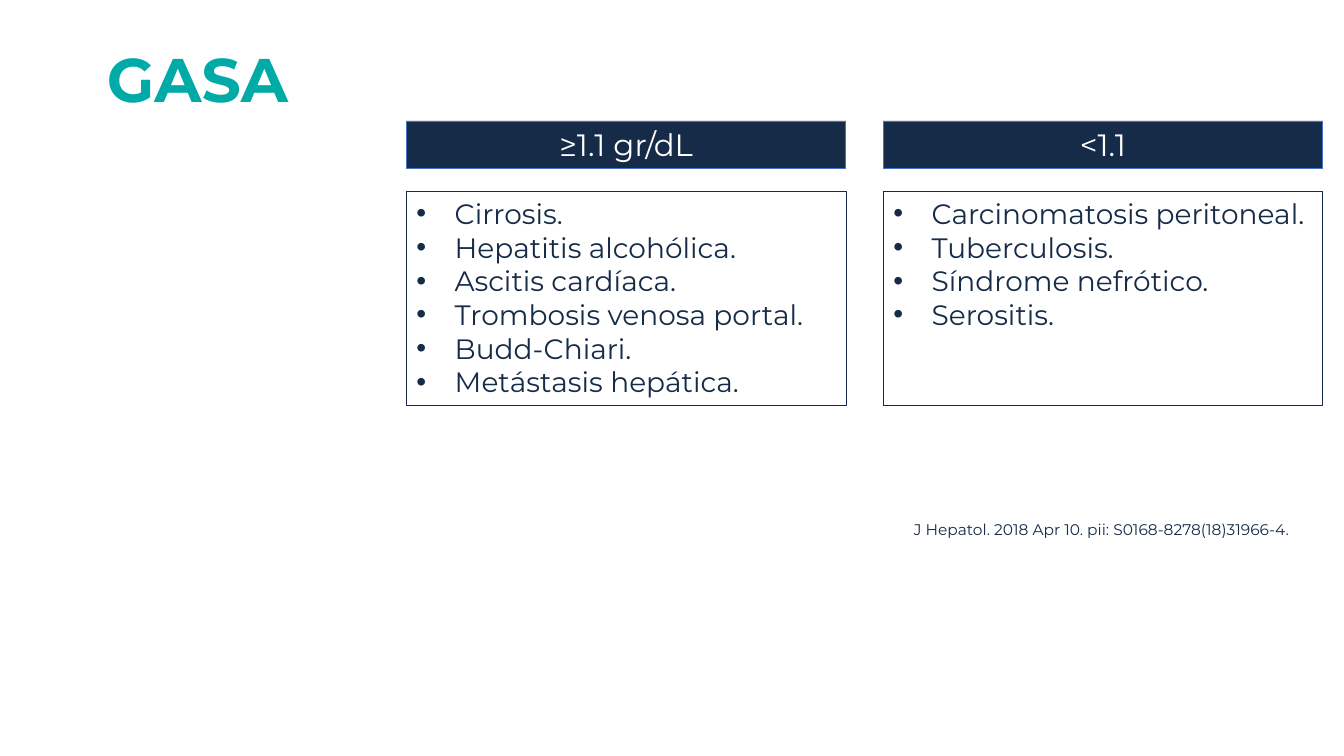
import pptx
import pptx.util
import pptx.dml.color
import pptx.enum.shapes
import pptx.enum.text
from lxml import etree

Inches = pptx.util.Inches
Pt = pptx.util.Pt
RGBColor = pptx.dml.color.RGBColor
ALIGN = pptx.enum.text.PP_ALIGN
ANCHOR = pptx.enum.text.MSO_ANCHOR

NAVY = RGBColor(0x15, 0x2B, 0x48)
TEAL = RGBColor(0x00, 0xAA, 0xA7)
BLUE = RGBColor(0x44, 0x72, 0xC4)
WHITE = RGBColor(0xFF, 0xFF, 0xFF)
FONT = "Montserrat"

HEADER_HEIGHT = 0.47
LIST_OFFSET = 0.7

COLUMNS = [
    (4.03, "≥1.1 gr/dL", ["Cirrosis.", "Hepatitis alcohólica.", "Ascitis cardíaca.",
                          "Trombosis venosa portal.", "Budd-Chiari.",
                          "Metástasis hepática."]),
    (8.76, "<1.1", ["Carcinomatosis peritoneal.", "Tuberculosis.",
                    "Síndrome nefrótico.", "Serositis."]),
]


def place(sp, left, top, width, height):
    sp.left, sp.top = Inches(left), Inches(top)
    sp.width, sp.height = Inches(width), Inches(height)


def write(sp, text, size, color, align, bold=False, anchor=ANCHOR.TOP, wrap=True):
    tf = sp.text_frame
    tf.text = text
    tf.word_wrap = wrap
    tf.auto_size = pptx.enum.text.MSO_AUTO_SIZE.NONE
    tf.vertical_anchor = anchor
    for p in tf.paragraphs:
        p.alignment = align
        p.line_spacing = 1.0
        p.space_before = Pt(0)
        for r in p.runs:
            r.font.name = FONT
            r.font.size = Pt(size)
            r.font.bold = bold
            r.font.color.rgb = color


def add_bullet(p):
    pPr = p._p.get_or_add_pPr()
    pPr.set("marL", str(Inches(0.38)))
    pPr.set("indent", str(-Inches(0.38)))
    ns = pptx.oxml.ns.qn
    etree.SubElement(pPr, ns("a:buFont")).set("typeface", "Arial")
    etree.SubElement(pPr, ns("a:buChar")).set("char", "•")


def add_title(s, text, left, top, width, height):
    sp = s.shapes.title
    place(sp, left, top, width, height)
    write(sp, text, 44, TEAL, ALIGN.LEFT, bold=True, wrap=False)


def add_column(s, body, header, items, left, top, width, height):
    """Header bar above a framed list held in the given body placeholder."""
    sp = s.shapes.add_shape(pptx.enum.shapes.MSO_SHAPE.RECTANGLE, Inches(left),
                            Inches(top), Inches(width), Inches(HEADER_HEIGHT))
    sp.shadow.inherit = False
    sp.fill.solid()
    sp.fill.fore_color.rgb = NAVY
    sp.line.color.rgb = BLUE
    sp.line.width = Pt(0.5)
    write(sp, header, 22, WHITE, ALIGN.CENTER, anchor=ANCHOR.MIDDLE)

    place(body, left, top + LIST_OFFSET, width, height - LIST_OFFSET)
    body.line.color.rgb = NAVY
    body.line.width = Pt(0.5)
    write(body, "\n".join(items), 20, NAVY, ALIGN.JUSTIFY)
    for p in body.text_frame.paragraphs:
        add_bullet(p)


def add_citation(s, text, left, top, width, height):
    sp = s.shapes.add_textbox(Inches(left), Inches(top), Inches(width), Inches(height))
    write(sp, text, 11, NAVY, ALIGN.RIGHT)


def main():
    prs = pptx.Presentation()
    prs.slide_width, prs.slide_height = Inches(13.33), Inches(7.5)
    s = prs.slides.add_slide(prs.slide_layouts.get_by_name("Two Content"))
    add_title(s, "GASA", 0.96, 0.36, 2.02, 0.84)
    bodies = list(s.placeholders)[1:]
    for body, (left, header, items) in zip(bodies, COLUMNS):
        add_column(s, body, header, items, left, 1.2, 4.36, 2.82)
    add_citation(s, "J Hepatol. 2018 Apr 10. pii: S0168-8278(18)31966-4.",
                 8.53, 5.11, 4.36, 0.29)
    prs.save("out.pptx")


if __name__ == "__main__":
    main()
